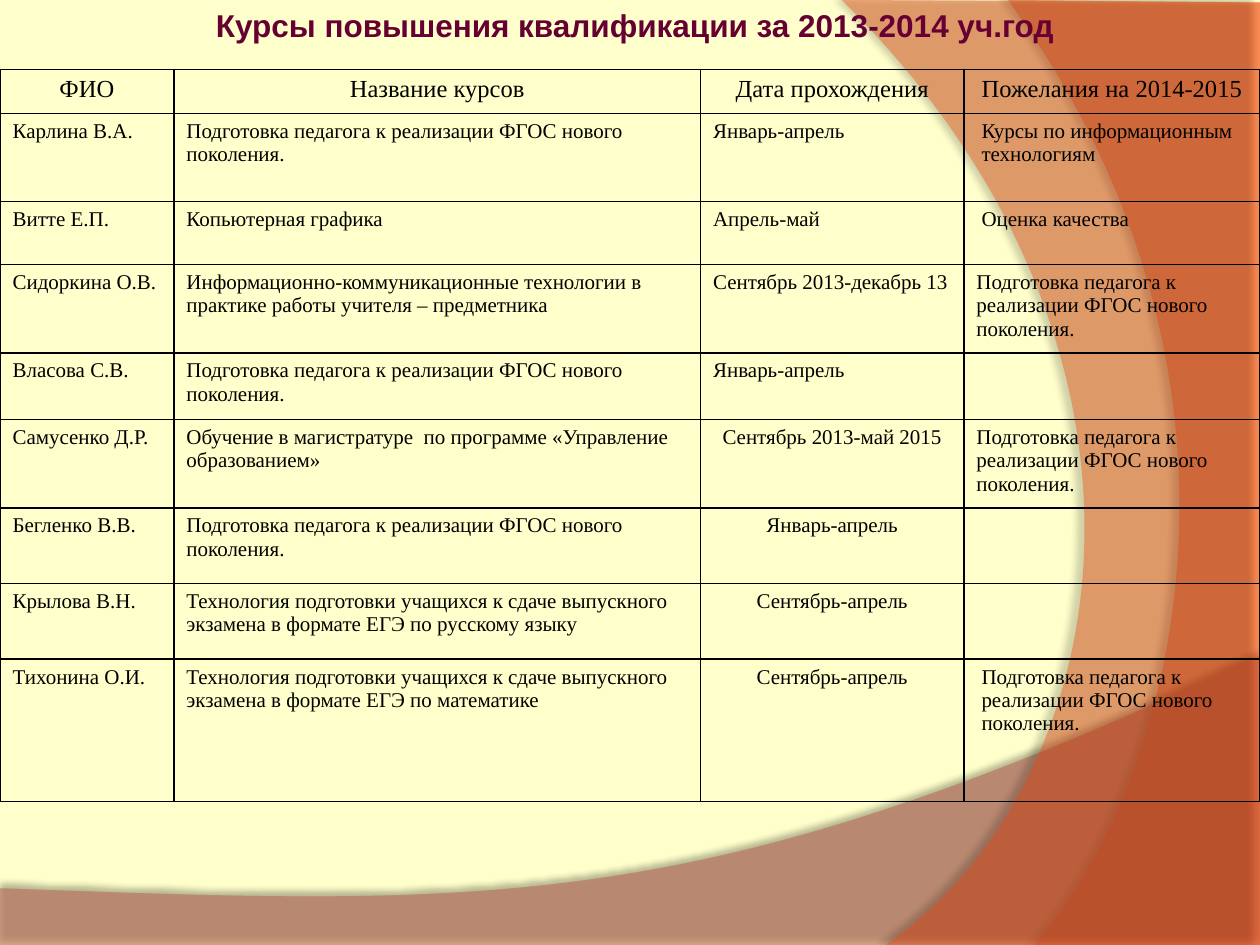
from dataclasses import dataclass

from lxml.etree import SubElement
from pptx import Presentation
from pptx.dml.color import RGBColor
from pptx.enum.text import MSO_ANCHOR, MSO_AUTO_SIZE, PP_ALIGN
from pptx.oxml.ns import qn
from pptx.util import Inches, Pt


@dataclass(frozen=True)
class Theme:
    background: str = "FFFFCC"
    title: str = "660033"
    ink: str = "000000"
    brown: str = "C77E69"
    orange: str = "F4480F"
    title_font: str = "Arial"
    table_font: str = "Times New Roman"
    title_size: int = 18
    header_size: int = 14
    body_size: int = 12


THEME = Theme()
Point = tuple[float, float]


@dataclass(frozen=True)
class Wave:
    """Filled area: straight corners, then one cubic curve from the last corner."""
    corners: tuple[Point, ...]
    curve: tuple[Point, Point, Point]
    color: str
    alpha: int
    shadow_alpha: int
    shadow_dist: float
    shadow_dir: int


@dataclass(frozen=True)
class Course:
    name: str
    title: str
    dates: str
    wish: str
    height: float
    center_dates: bool = False
    indent_wish: bool = False


FLOOR = Wave(((0, 7.05), (0, 7.51), (10, 7.51), (10, 5.2)),
             ((5.59, 7.29), (3.91, 7.19), (0, 7.05)),
             THEME.brown, 45, 35, 3.5, 270)


def side_wave(top: float, bottom: float, c1: Point, c2: Point) -> Wave:
    return Wave(((10, 0.02), (10, 7.5), (bottom, 7.5)), (c1, c2, (top, 0)),
                THEME.orange, 40, 45, 4, 180)


WAVES = (FLOOR, side_wave(8, 8.21, (9.35, 6.19), (10.18, 3)),
         FLOOR, side_wave(6.68, 7.03, (8.91, 6.19), (9.47, 2.75)))

HEADERS = ("ФИО", "Название курсов", "Дата прохождения", "Пожелания на 2014-2015")
HEADER_HEIGHT = 0.35
COL_WIDTHS = (1.38, 4.18, 2.09, 2.35)
FGOS = "Подготовка педагога к реализации ФГОС нового поколения."
EXAM = "Технология подготовки учащихся к сдаче выпускного экзамена в формате ЕГЭ по "
COURSES = (
    Course("Карлина В.А.", FGOS, "Январь-апрель",
           "Курсы по информационным технологиям", 0.7, indent_wish=True),
    Course("Витте Е.П.", "Копьютерная графика", "Апрель-май",
           "Оценка качества", 0.5, indent_wish=True),
    Course("Сидоркина О.В.",
           "Информационно-коммуникационные технологии в практике работы учителя – предметника",
           "Сентябрь 2013-декабрь 13", FGOS, 0.7),
    Course("Власова С.В.", FGOS, "Январь-апрель", "", 0.53),
    Course("Самусенко Д.Р.",
           "Обучение в магистратуре  по программе «Управление образованием»",
           "Сентябрь 2013-май 2015", FGOS, 0.7, center_dates=True),
    Course("Бегленко В.В.", FGOS, "Январь-апрель", "", 0.6, center_dates=True),
    Course("Крылова В.Н.", EXAM + "русскому языку", "Сентябрь-апрель", "", 0.6,
           center_dates=True),
    Course("Тихонина О.И.", EXAM + "математике", "Сентябрь-апрель", FGOS, 1.13,
           center_dates=True, indent_wish=True),
)


def add_run(p, text: str, font: str, size: int, color: str, bold: bool = False) -> None:
    r = p.add_run()
    r.text = text
    r.font.name, r.font.size, r.font.bold = font, Pt(size), bold
    r.font.color.rgb = RGBColor.from_string(color)


def add_color(parent, color: str, alpha: int = 100) -> None:
    clr = SubElement(parent, qn("a:srgbClr"), val=color)
    if alpha < 100:
        SubElement(clr, qn("a:alpha"), val=str(alpha * 1000))


def bend_last_side(sp, curve: tuple[Point, Point, Point]) -> None:
    """Turn the last straight segment of a freeform into a cubic curve."""
    last = list(sp.element.iter(qn("a:lnTo")))[-1]
    outline = last.getparent()
    bezier = SubElement(outline, qn("a:cubicBezTo"))
    for x, y in curve:
        SubElement(bezier, qn("a:pt"), x=str(Inches(x) - sp.left), y=str(Inches(y) - sp.top))
    outline.replace(last, bezier)


def add_wave(s, wave: Wave) -> None:
    outline = (*wave.corners, wave.curve[-1])
    start, *rest = [(Inches(x), Inches(y)) for x, y in outline]
    builder = s.shapes.build_freeform(*start)
    builder.add_line_segments(rest, close=True)
    sp = builder.convert_to_shape()
    bend_last_side(sp, wave.curve)
    sp.line.fill.background()
    sp.fill.solid()
    sp.fill.fore_color.rgb = RGBColor.from_string(wave.color)
    sp.shadow.inherit = False
    # Transparency and soft shadow
    sp_pr = sp.element.spPr
    SubElement(sp_pr.find(qn("a:solidFill"))[0], qn("a:alpha"), val=str(wave.alpha * 1000))
    shadow = SubElement(sp_pr.find(qn("a:effectLst")), qn("a:outerShdw"),
                        blurRad=str(Pt(4)), dist=str(Pt(wave.shadow_dist)),
                        dir=str(wave.shadow_dir * 60000), algn="ctr", rotWithShape="0")
    add_color(shadow, THEME.ink, wave.shadow_alpha)


def add_title(s, text: str) -> None:
    title = s.shapes.title
    title.left, title.top = Inches(1.58), Inches(0)
    title.width, title.height = Inches(6.92), Inches(0.4)
    title.element.getparent().append(title.element)  # in front of the waves
    tf = title.text_frame
    tf.word_wrap = False
    tf.auto_size = MSO_AUTO_SIZE.SHAPE_TO_FIT_TEXT
    tf.vertical_anchor = MSO_ANCHOR.MIDDLE
    p = tf.paragraphs[0]
    p.alignment = PP_ALIGN.CENTER
    add_run(p, text, THEME.title_font, THEME.title_size, THEME.title, bold=True)


def style_cell(cell) -> None:
    cell.fill.background()
    tc_pr = cell._tc.get_or_add_tcPr()
    for i, side in enumerate(("a:lnL", "a:lnR", "a:lnT", "a:lnB")):
        ln = SubElement(tc_pr, qn(side), w=str(Pt(1)))
        add_color(SubElement(ln, qn("a:solidFill")), THEME.ink)
        tc_pr.insert(i, ln)


def fill_cell(cell, text: str, size: int, center: bool = False, indent: bool = False) -> None:
    style_cell(cell)
    if not text:
        return
    p = cell.text_frame.paragraphs[0]
    if center:
        p.alignment = PP_ALIGN.CENTER
    if indent:
        p_pr = p._p.get_or_add_pPr()
        p_pr.set("marL", str(Inches(0.04)))
        p_pr.set("indent", "0")
        SubElement(SubElement(p_pr, qn("a:spcBef")), qn("a:spcPct"), val="20000")
    add_run(p, text, THEME.table_font, size, THEME.ink)


def add_course_table(s) -> None:
    heights = (HEADER_HEIGHT, *(c.height for c in COURSES))
    table = s.shapes.add_table(len(heights), len(COL_WIDTHS), Inches(0), Inches(0.55),
                               Inches(sum(COL_WIDTHS)), Inches(sum(heights))).table
    table.first_row = table.horz_banding = False
    for col, width in zip(table.columns, COL_WIDTHS):
        col.width = Inches(width)
    for row, height in zip(table.rows, heights):
        row.height = Inches(height)
    for j, text in enumerate(HEADERS):
        fill_cell(table.cell(0, j), text, THEME.header_size, center=True)
    for i, c in enumerate(COURSES, start=1):
        for j, text in enumerate((c.name, c.title, c.dates, c.wish)):
            fill_cell(table.cell(i, j), text, THEME.body_size,
                      center=j == 2 and c.center_dates, indent=j == 3 and c.indent_wish)


def main() -> None:
    prs = Presentation()
    prs.slide_width, prs.slide_height = Inches(10), Inches(7.5)
    s = prs.slides.add_slide(prs.slide_layouts[5])
    s.background.fill.solid()
    s.background.fill.fore_color.rgb = RGBColor.from_string(THEME.background)
    # Backdrop, heading, table
    for wave in WAVES:
        add_wave(s, wave)
    add_title(s, "Курсы повышения квалификации за 2013-2014 уч.год")
    add_course_table(s)
    prs.save("out.pptx")


if __name__ == "__main__":
    main()
